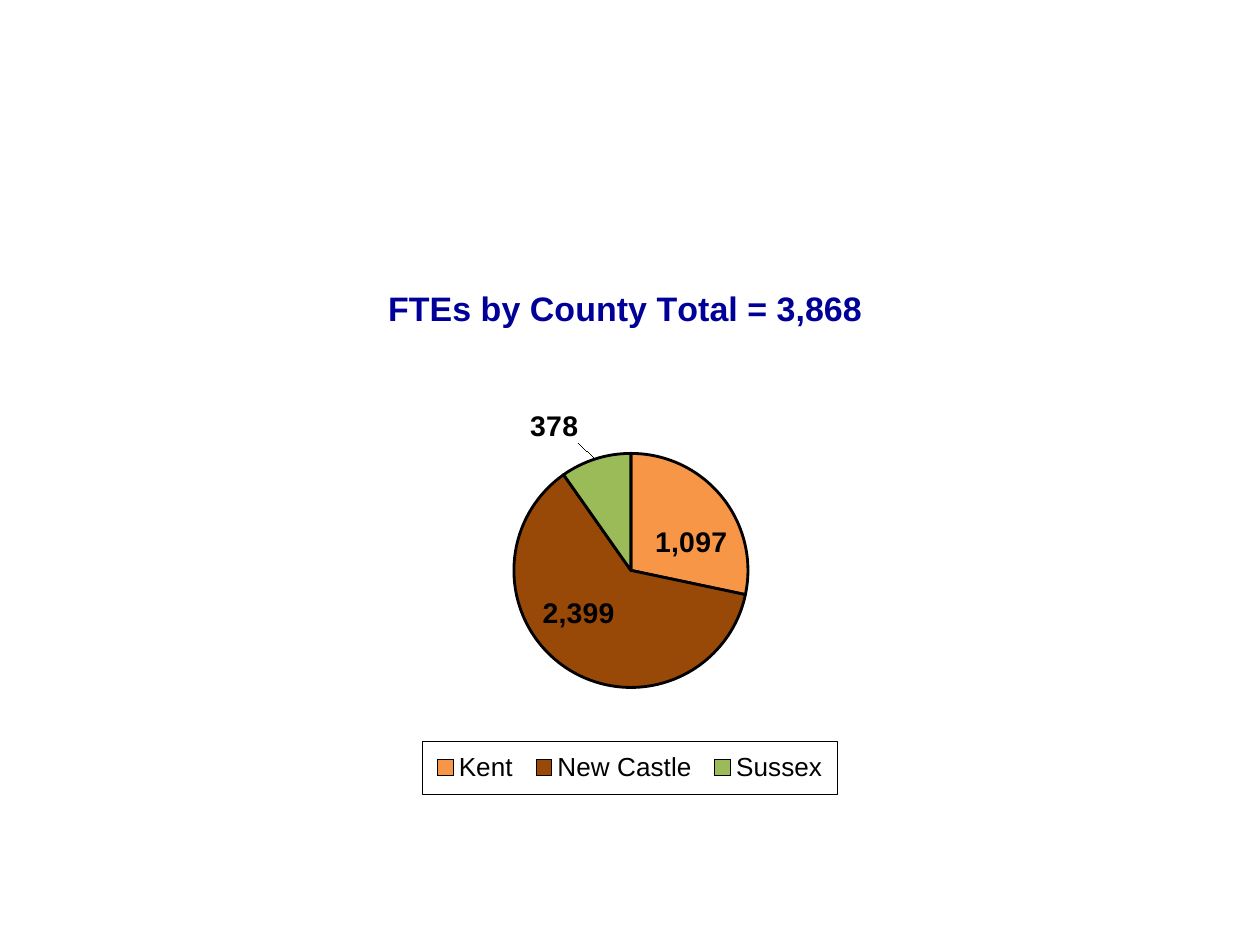
"""Build a slide with a pie chart of full-time equivalents by county."""
from dataclasses import dataclass

import pptx
import pptx.chart.data
import pptx.dml.color
import pptx.enum.chart
import pptx.oxml
import pptx.oxml.ns
import pptx.util

Pt = pptx.util.Pt
Position = pptx.enum.chart.XL_LABEL_POSITION
BLACK = "000000"
NUMBER_FORMAT = "#,##0"


@dataclass(frozen=True)
class County:
    name: str
    staff: int
    color: str
    position: Position
    shift_x: float
    shift_y: float


COUNTIES = [
    County("Kent", 1097, "F79646", Position.CENTER, 0.0075, 0.016),
    County("New Castle", 2399, "984807", Position.CENTER, -0.01, -0.01),
    County("Sussex", 378, "9BBB59", Position.OUTSIDE_END, -0.0075, -0.015),
]


def rgb(color: str) -> pptx.dml.color.RGBColor:
    return pptx.dml.color.RGBColor.from_string(color)


def format_font(font, *, size: float, color: str = BLACK, bold: bool = False) -> None:
    font.name = "Arial"
    font.size = Pt(size)
    font.bold = bold
    font.color.rgb = rgb(color)


def write_text(frame, text: str, **style) -> None:
    para = frame.paragraphs[0]
    span = para.add_run()
    span.text = text
    format_font(span.font, **style)


def chart_xml(body: str):
    namespace = pptx.oxml.ns.nsdecls("c")
    return pptx.oxml.parse_xml(body.replace(">", f" {namespace}>", 1))


def make_layout(*, edge: bool = False, inner: bool = False, **values: float):
    parts = '<c:layoutTarget val="inner"/>' if inner else ""
    if edge:
        parts += '<c:xMode val="edge"/><c:yMode val="edge"/>'
    parts += "".join(f'<c:{key} val="{value}"/>' for key, value in values.items())
    return chart_xml(f"<c:layout><c:manualLayout>{parts}</c:manualLayout></c:layout>")


def set_layout(parent, previous: str, layout) -> None:
    for old in parent.findall(pptx.oxml.ns.qn("c:layout")):
        parent.remove(old)
    if previous:
        parent.find(pptx.oxml.ns.qn(previous)).addnext(layout)
    else:
        parent.insert(0, layout)


def format_slice(point, county: County) -> None:
    point.format.fill.solid()
    point.format.fill.fore_color.rgb = rgb(county.color)
    point.format.line.color.rgb = rgb(BLACK)
    point.format.line.width = Pt(1.62)
    label = point.data_label
    format_font(label.font, size=16.2, bold=True)
    label.position = county.position


def place_labels(series) -> None:
    labels = series.data_labels
    labels.show_value = True
    labels.number_format = NUMBER_FORMAT
    labels.number_format_is_linked = False
    format_font(labels.font, size=16.2, bold=True)
    elements = labels._element.findall(pptx.oxml.ns.qn("c:dLbl"))
    for element, county in zip(elements, COUNTIES):
        layout = make_layout(x=county.shift_x, y=county.shift_y)
        set_layout(element, "c:idx", layout)
        layout.addnext(chart_xml(
            f'<c:numFmt formatCode="{NUMBER_FORMAT}" sourceLinked="0"></c:numFmt>'))


def add_legend(chart) -> None:
    chart.has_legend = True
    legend = chart.legend
    legend.position = pptx.enum.chart.XL_LEGEND_POSITION.RIGHT
    legend.include_in_layout = False
    format_font(legend.font, size=14.9)
    set_layout(legend._element, "c:legendPos",
               make_layout(edge=True, x=0.3965, y=0.869, w=0.207, h=0.095))
    legend._element.find(pptx.oxml.ns.qn("c:overlay")).addnext(chart_xml(
        '<c:spPr><a:ln xmlns:a="http://schemas.openxmlformats.org/drawingml/2006/main" '
        f'w="5080"><a:solidFill><a:srgbClr val="{BLACK}"/></a:solidFill></a:ln></c:spPr>'))


def add_county_chart(page) -> None:
    data = pptx.chart.data.CategoryChartData(number_format=NUMBER_FORMAT)
    data.categories = [county.name for county in COUNTIES]
    data.add_series("Series 1", [county.staff for county in COUNTIES])
    chart = page.shapes.add_chart(
        pptx.enum.chart.XL_CHART_TYPE.PIE,
        Pt(-211.68), Pt(147.6), Pt(1143.36), Pt(317.52), data).chart
    format_font(chart.font, size=16.2)
    chart.has_title = True
    title = chart.chart_title
    write_text(title.text_frame, "FTEs by County Total = 3,868",
               size=19.4, color="000099", bold=True)
    set_layout(title._element, "c:tx", make_layout(edge=True, x=0.376, y=0.038))
    plot = chart.plots[0]
    plot.vary_by_categories = True
    set_layout(plot._element.getparent(), "",
               make_layout(edge=True, inner=True, x=0.442, y=0.35, w=0.117, h=0.424))
    series = plot.series[0]
    for index, county in enumerate(COUNTIES):
        format_slice(series.points[index], county)
    place_labels(series)
    add_legend(chart)


def main() -> None:
    deck = pptx.Presentation()
    deck.slide_width, deck.slide_height = Pt(720), Pt(540)
    page = deck.slides.add_slide(deck.slide_layouts[6])
    add_county_chart(page)
    deck.save("out.pptx")


if __name__ == "__main__":
    main()
